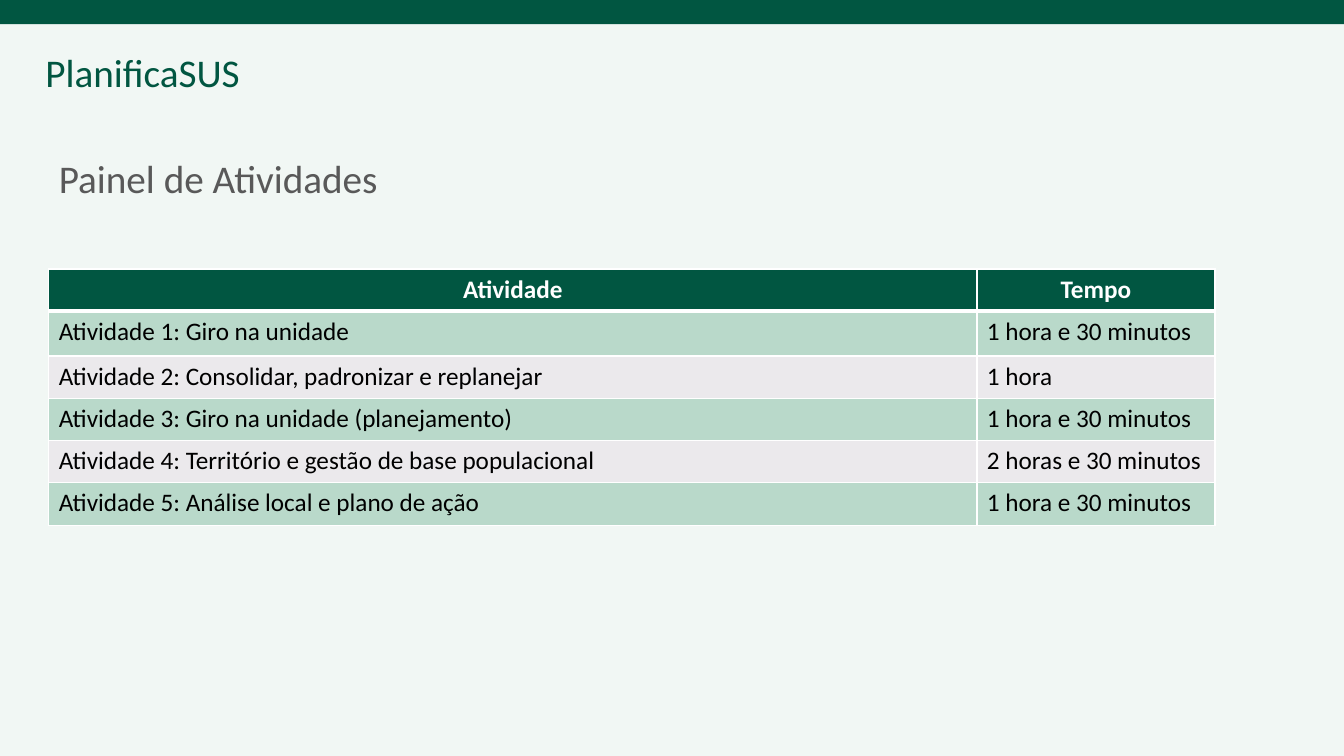
from dataclasses import dataclass

from lxml import etree
from pptx import Presentation
from pptx.dml.color import RGBColor
from pptx.enum.shapes import MSO_SHAPE
from pptx.enum.text import MSO_ANCHOR, MSO_AUTO_SIZE, PP_ALIGN
from pptx.oxml.ns import qn
from pptx.util import Pt

RECTANGLE = MSO_SHAPE.RECTANGLE
MIDDLE = MSO_ANCHOR.MIDDLE
FIT_SHAPE = MSO_AUTO_SIZE.SHAPE_TO_FIT_TEXT
NO_FIT = MSO_AUTO_SIZE.NONE
LEFT, CENTER = PP_ALIGN.LEFT, PP_ALIGN.CENTER

FONT = "Calibri"
SLIDE_WIDTH, SLIDE_HEIGHT = 960, 540
TITLE_ONLY_LAYOUT = 5
COLORS = {
    "background": "F1F7F4",
    "green": "015641",
    "title": "595959",
    "green_band": "B9D9CA",
    "gray_band": "EBE9EC",
    "white": "FFFFFF",
    "black": "000000",
}


@dataclass(frozen=True)
class Activity:
    name: str
    duration: str


ACTIVITIES = [
    Activity("Atividade 1: Giro na unidade", "1 hora e 30 minutos"),
    Activity("Atividade 2: Consolidar, padronizar e replanejar", "1 hora"),
    Activity("Atividade 3: Giro na unidade (planejamento)", "1 hora e 30 minutos"),
    Activity("Atividade 4: Território e gestão de base populacional", "2 horas e 30 minutos"),
    Activity("Atividade 5: Análise local e plano de ação", "1 hora e 30 minutos"),
]
COLUMN_WIDTHS = [663, 170]
HEADER_HEIGHT, FIRST_ROW_HEIGHT, ROW_HEIGHT = 30, 32.2, 30.2


def color(name: str) -> RGBColor:
    return RGBColor.from_string(COLORS[name])


def write_text(frame, text: str, *, size: float, color_name: str,
               bold: bool = False, align=LEFT, line_spacing: float = 1.0) -> None:
    paragraph = frame.paragraphs[0]
    paragraph.alignment = align
    paragraph.line_spacing = line_spacing
    run = paragraph.add_run()
    run.text = text
    run.font.name = FONT
    run.font.size = Pt(size)
    run.font.bold = bold
    run.font.color.rgb = color(color_name)


def set_borders(cell, *, top: float, bottom: float) -> None:
    properties = cell._tc.get_or_add_tcPr()
    for side, width in {"L": 1, "R": 1, "T": top, "B": bottom}.items():
        line = etree.SubElement(properties, qn(f"a:ln{side}"), w=str(Pt(width)))
        fill = etree.SubElement(line, qn("a:solidFill"))
        etree.SubElement(fill, qn("a:srgbClr"), val=COLORS["white"])


def add_header(slide) -> None:
    bar = slide.shapes.add_shape(RECTANGLE, Pt(0), Pt(0), Pt(SLIDE_WIDTH), Pt(17.3))
    bar.shadow.inherit = False
    bar.fill.solid()
    bar.fill.fore_color.rgb = color("green")
    bar.line.fill.background()
    label = slide.shapes.add_textbox(Pt(25.3), Pt(31), Pt(154.8), Pt(41))
    label.text_frame.word_wrap = False
    label.text_frame.auto_size = FIT_SHAPE
    write_text(label.text_frame, "PlanificaSUS", size=28, color_name="green")


def format_title(slide) -> None:
    title = slide.shapes.title
    title.left, title.top, title.width, title.height = Pt(34.8), Pt(77), Pt(791), Pt(104.4)
    frame = title.text_frame
    frame.word_wrap = True
    frame.auto_size = NO_FIT
    frame.vertical_anchor = MIDDLE
    write_text(frame, "Painel de Atividades", size=28, color_name="title", line_spacing=0.9)


def add_activity_table(slide, activities: list[Activity]) -> None:
    row_heights = [HEADER_HEIGHT, FIRST_ROW_HEIGHT] + [ROW_HEIGHT] * (len(activities) - 1)
    table = slide.shapes.add_table(
        len(row_heights), len(COLUMN_WIDTHS), Pt(34.8), Pt(192.2),
        Pt(sum(COLUMN_WIDTHS)), Pt(sum(row_heights))).table
    for column, width in zip(table.columns, COLUMN_WIDTHS):
        column.width = Pt(width)
    for row, height in zip(table.rows, row_heights):
        row.height = Pt(height)

    rows = [Activity("Atividade", "Tempo"), *activities]
    for row_index, activity in enumerate(rows):
        is_header = row_index == 0
        band = "green_band" if row_index % 2 else "gray_band"
        for column_index, text in enumerate((activity.name, activity.duration)):
            cell = table.cell(row_index, column_index)
            set_borders(cell, top=3 if row_index == 1 else 1, bottom=3 if is_header else 1)
            cell.fill.solid()
            cell.fill.fore_color.rgb = color("green" if is_header else band)
            write_text(cell.text_frame, text, size=18, bold=is_header,
                       color_name="white" if is_header else "black",
                       align=CENTER if is_header else LEFT)


def main() -> None:
    presentation = Presentation()
    presentation.slide_width = Pt(SLIDE_WIDTH)
    presentation.slide_height = Pt(SLIDE_HEIGHT)
    slide = presentation.slides.add_slide(presentation.slide_layouts[TITLE_ONLY_LAYOUT])
    slide.background.fill.solid()
    slide.background.fill.fore_color.rgb = color("background")
    add_header(slide)
    format_title(slide)
    add_activity_table(slide, ACTIVITIES)
    presentation.save("out.pptx")


if __name__ == "__main__":
    main()
